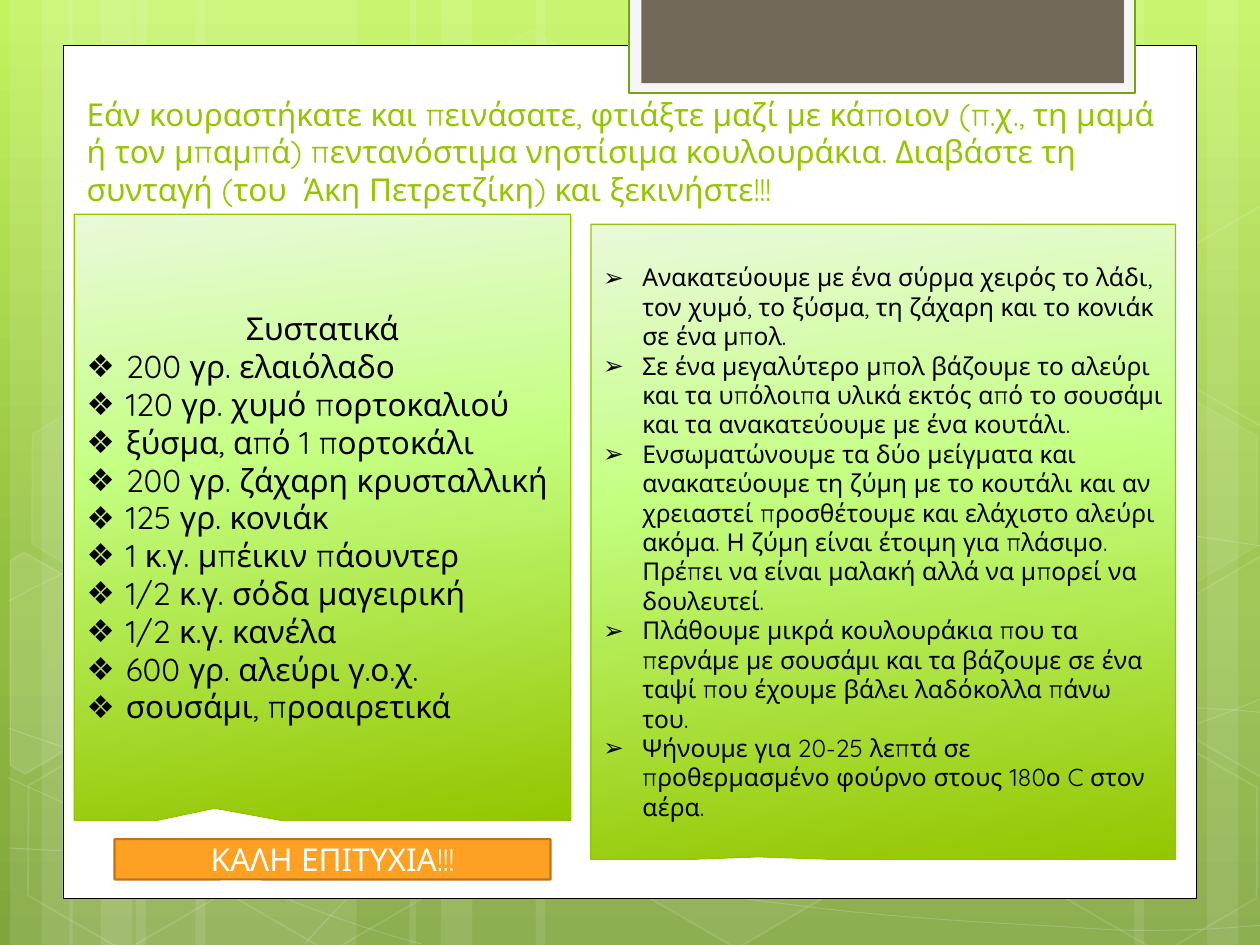
import math
from dataclasses import dataclass
from typing import NamedTuple, Optional

import pptx
import pptx.dml.color
import pptx.enum.shapes
import pptx.enum.text
import pptx.oxml
import pptx.oxml.ns
import pptx.util

PX = 9144
KIND = pptx.enum.shapes.MSO_SHAPE
ALIGN = pptx.enum.text.PP_ALIGN
ANCHOR = pptx.enum.text.MSO_ANCHOR
qn = pptx.oxml.ns.qn


@dataclass(frozen=True)
class Theme:
    font: str = "Quicksand"
    big: int = 18
    small: int = 14
    white: str = "FFFFFF"
    black: str = "000000"
    lime: str = "94C600"
    leaf: str = "74A510"
    pale: str = "F5F5F5"
    brown: str = "71685A"
    gold: str = "FEA022"
    rust: str = "BC7619"
    sky: tuple = ((0, "C3F35F"), (62, "93BF3F"), (100, "81A53E"))
    card: tuple = ((0, "EAF9DA"), (40, "C4FF82"), (100, "94C600"))


T = Theme()


class Box(NamedTuple):
    x: int
    y: int
    w: int
    h: int


class Ink(NamedTuple):
    color: str
    width: float = 0
    alpha: int = 100


class Hex(NamedTuple):
    x: int
    y: int
    fill: int
    edge: int


class Shard(NamedTuple):
    mid: tuple
    fill: int
    dots: list


class Line(NamedTuple):
    text: str
    size: int = T.big
    color: str = T.black
    align: int = ALIGN.LEFT
    mark: str = ""


class Card(NamedTuple):
    box: Box
    adj: tuple
    fill: Optional[Ink]
    edge: Ink
    lines: list


def emu(box: Box) -> list:
    return [n * PX for n in box]


def add(root, tag: str, **attrs: str):
    node = pptx.oxml.parse_xml(f"<{tag} {pptx.oxml.ns.nsdecls('a')}/>")
    for key, val in attrs.items():
        node.set(key, val)
    root.append(node)
    return node


def tint(fill, root, ink: Ink) -> None:
    fill.solid()
    fill.fore_color.rgb = pptx.dml.color.RGBColor.from_string(ink.color)
    if ink.alpha < 100:
        clr = root.find(qn("a:solidFill")).find(qn("a:srgbClr"))
        add(clr, "a:alpha", val=str(ink.alpha * 1000))


def fade(fill, root, stops: tuple, angle: int) -> None:
    fill.gradient()
    fill.gradient_angle = 360 - angle
    group = root.find(".//" + qn("a:gsLst"))
    group.clear()
    for pos, color in stops:
        add(add(group, "a:gs", pos=str(pos * 1000)), "a:srgbClr", val=color)


def style(shape, fill: Optional[Ink], edge: Optional[Ink]) -> None:
    shape.shadow.inherit = False
    props = shape.element.spPr
    if fill:
        tint(shape.fill, props, fill)
    else:
        shape.fill.background()
    if edge:
        shape.line.width = pptx.util.Pt(edge.width)
        tint(shape.line.fill, props.find(qn("a:ln")), edge)
    else:
        shape.line.fill.background()


def block(slide, kind, box: Box, fill: Optional[Ink], edge: Optional[Ink] = None, adj: tuple = ()):
    shape = slide.shapes.add_shape(kind, *emu(box))
    for i, val in enumerate(adj):
        shape.adjustments[i] = val
    style(shape, fill, edge)
    return shape


def outline(slide, dots: list, shut: bool, fill: Optional[Ink], edge: Ink):
    first, *rest = [(round(x * PX), round(y * PX)) for x, y in dots]
    pen = slide.shapes.build_freeform(*first)
    pen.add_line_segments(rest, close=shut)
    shape = pen.convert_to_shape()
    style(shape, fill, edge)
    return shape


def bend(shape) -> None:
    trace = shape.element.spPr.find(".//" + qn("a:path"))
    legs = trace.findall(qn("a:lnTo"))
    for i in range(0, len(legs), 3):
        curve = add(trace, "a:cubicBezTo")
        for leg in legs[i:i + 3]:
            curve.append(leg[0])
            trace.remove(leg)


def turn(dots: list, mid: tuple, angle: int) -> list:
    cos, sin = math.cos(math.radians(angle)), math.sin(math.radians(angle))
    mx, my = mid
    return [(mx + (x - mx) * cos - (y - my) * sin, my + (x - mx) * sin + (y - my) * cos)
            for x, y in dots]


def write(shape, lines: list, anchor) -> None:
    frame = shape.text_frame
    frame.word_wrap = True
    frame.vertical_anchor = anchor
    for i, line in enumerate(lines):
        para = frame.paragraphs[0] if i == 0 else frame.add_paragraph()
        para.alignment = line.align
        if line.mark:
            props = para._p.get_or_add_pPr()
            props.set("marL", str(31 * PX))
            props.set("indent", str(-31 * PX))
            add(props, "a:buFont", typeface=T.font)
            add(props, "a:buChar", char=line.mark)
        run = para.add_run()
        run.text = line.text
        run.font.name = T.font
        run.font.size = pptx.util.Pt(line.size)
        run.font.color.rgb = pptx.dml.color.RGBColor.from_string(line.color)


BANDS = [(108, 175), (8, 50), (33, 83), (155, 175), (55, 50), (80, 83),
         (733, 175), (958, 50), (900, 83), (425, 308), (325, 50), (350, 83)]
CURVES = [
    [(7, 673), (61, 676), (115, 679), (190, 678), (265, 677), (358, 675), (458, 665),
     (558, 655), (700, 636), (792, 617), (883, 598), (977, 568), (1007, 551)],
    [(7, 477), (36, 461), (65, 446), (121, 431), (178, 416), (259, 394), (347, 387),
     (436, 380), (544, 379), (654, 387), (764, 395), (947, 426), (1007, 434)],
    [(6, 617), (127, 672), (247, 727), (334, 749)],
    [(7, 578), (38, 589), (70, 600), (128, 616), (186, 631), (273, 656), (357, 673),
     (440, 690), (545, 708), (628, 718), (711, 729), (800, 733), (853, 736),
     (905, 740), (919, 738), (945, 738), (971, 737), (989, 735), (1007, 734)],
    [(242, 749), (260, 729), (278, 709), (302, 691), (326, 673), (360, 653), (388, 639),
     (416, 625), (433, 619), (470, 609), (506, 599), (573, 585), (608, 578),
     (644, 571), (649, 571), (680, 569), (711, 566), (760, 563), (794, 562),
     (829, 561), (886, 562), (886, 562), (908, 562), (931, 562), (953, 562),
     (971, 563), (988, 564), (997, 565), (1006, 566), (1003, 565), (1006, 566)],
]
CELLS = [
    Hex(334, 36, 4, 8), Hex(497, 589, 6, 12),
    Shard((36, 535), 10, [(8, 445), (19, 438), (96, 482), (95, 570), (20, 614), (8, 607)]),
    Hex(11, 591, 0, 12), Hex(14, 312, 7, 8), Hex(174, 592, 0, 12),
    Hex(753, 453, 10, 12), Hex(834, 593, 0, 12), Hex(834, 314, 7, 8),
    Shard((985, 520), 4, [(926, 485), (1001, 441), (1009, 446), (1009, 613), (1002, 617), (926, 573)]),
    Shard((985, 241), 0, [(926, 207), (1001, 163), (1010, 168), (1009, 335), (1002, 339), (926, 295)]),
]
TITLE = ("Εάν κουραστήκατε και πεινάσατε, φτιάξτε μαζί με κάποιον (π.χ., τη μαμά ή τον μπαμπά) "
         "πεντανόστιμα νηστίσιμα κουλουράκια. Διαβάστε τη συνταγή (του  Άκη Πετρετζίκη) και ξεκινήστε!!!")
GOODS = ["200 γρ. ελαιόλαδο", "120 γρ. χυμό πορτοκαλιού", "ξύσμα, από 1 πορτοκάλι",
         "200 γρ. ζάχαρη κρυσταλλική", "125 γρ. κονιάκ", "1 κ.γ. μπέικιν πάουντερ",
         "1/2 κ.γ. σόδα μαγειρική", "1/2 κ.γ. κανέλα", "600 γρ. αλεύρι γ.ο.χ.",
         "σουσάμι, προαιρετικά"]
STEPS = [
    "Ανακατεύουμε με ένα σύρμα χειρός το λάδι, τον χυμό, το ξύσμα, τη ζάχαρη και το κονιάκ σε ένα μπολ.",
    "Σε ένα μεγαλύτερο μπολ βάζουμε το αλεύρι και τα υπόλοιπα υλικά εκτός από το σουσάμι και τα ανακατεύουμε με ένα κουτάλι.",
    "Ενσωματώνουμε τα δύο μείγματα και ανακατεύουμε τη ζύμη με το κουτάλι και αν χρειαστεί προσθέτουμε και ελάχιστο αλεύρι ακόμα. Η ζύμη είναι έτοιμη για πλάσιμο. Πρέπει να είναι μαλακή αλλά να μπορεί να δουλευτεί.",
    "Πλάθουμε μικρά κουλουράκια που τα περνάμε με σουσάμι και τα βάζουμε σε ένα ταψί που έχουμε βάλει λαδόκολλα πάνω του.",
    "Ψήνουμε για 20-25 λεπτά σε προθερμασμένο φούρνο στους 180ο C στον αέρα.",
]
CARDS = [
    Card(Box(59, 170, 394, 481), (-0.217, 0.48), None, Ink(T.lime, 0.75),
         [Line("Συστατικά", align=ALIGN.CENTER)] + [Line(s, mark="❖") for s in GOODS]),
    Card(Box(469, 178, 464, 504), (-0.213, 0.496), None, Ink(T.lime, 0.75),
         [Line(s, T.small, mark="➢") for s in STEPS]),
    Card(Box(91, 666, 346, 32), (-0.211, 0.498), Ink(T.gold), Ink(T.rust, 1.25),
         [Line("ΚΑΛΗ ΕΠΙΤΥΧΙΑ!!!", color=T.white, align=ALIGN.CENTER)]),
]


def scene(slide) -> None:
    fade(slide.background.fill, slide.element, T.sky, 90)
    for x, w in BANDS:
        block(slide, KIND.RECTANGLE, Box(x, 0, w, 750), Ink(T.white, alpha=10))
    for knots in CURVES:
        bend(outline(slide, knots, False, None, Ink(T.white, 0.5, 20)))
    for cell in CELLS:
        fill = Ink(T.white, alpha=cell.fill) if cell.fill else None
        if isinstance(cell, Hex):
            shape = block(slide, KIND.HEXAGON, Box(cell.x, cell.y, 175, 152), fill,
                          Ink(T.white, 1, cell.edge), (0.285, 1.155))
        else:
            shape = outline(slide, turn(cell.dots, cell.mid, -30), True, fill, Ink(T.white, 1, 12))
        shape.rotation = 30
    block(slide, KIND.RECTANGLE, Box(50, 36, 900, 677), Ink(T.white), Ink(T.black, 0.5))
    block(slide, KIND.RECTANGLE, Box(499, -2, 402, 76), Ink(T.pale), Ink(T.leaf, 1.25))
    block(slide, KIND.RECTANGLE, Box(509, -2, 383, 68), Ink(T.brown))


def main() -> None:
    deck = pptx.Presentation()
    deck.slide_width, deck.slide_height = 1000 * PX, 750 * PX
    slide = deck.slides.add_slide(deck.slide_layouts[6])
    scene(slide)
    title = slide.shapes.add_textbox(*emu(Box(59, 84, 874, 86)))
    write(title, [Line(TITLE, color=T.lime)], ANCHOR.BOTTOM)
    for card in CARDS:
        shape = block(slide, KIND.RECTANGULAR_CALLOUT, card.box, card.fill, card.edge, card.adj)
        if not card.fill:
            fade(shape.fill, shape.element.spPr, T.card, 84)
        write(shape, card.lines, ANCHOR.MIDDLE)
    deck.save("out.pptx")


if __name__ == "__main__":
    main()
